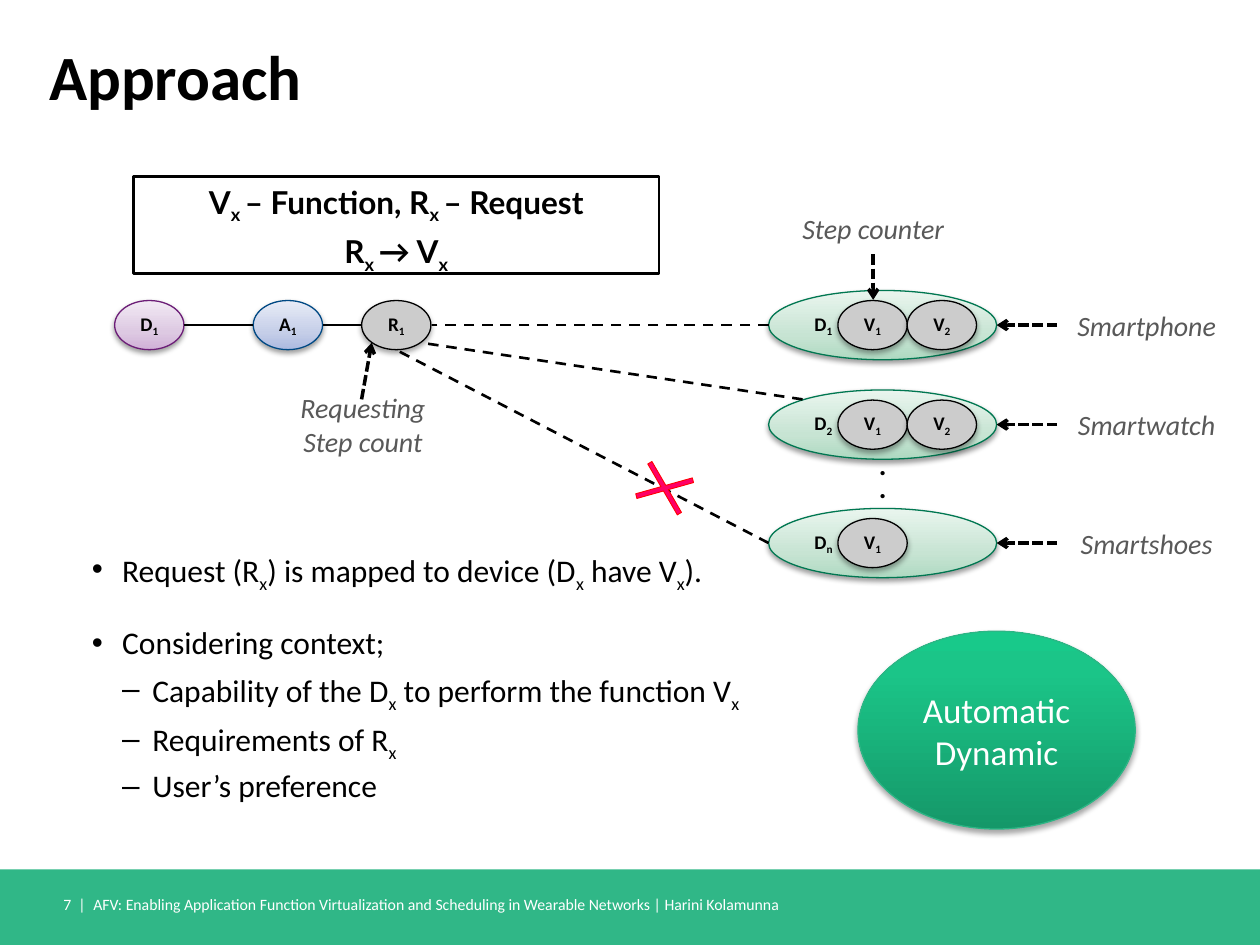
from pptx import Presentation
from pptx.dml.color import RGBColor
from pptx.enum.dml import MSO_LINE
from pptx.enum.shapes import MSO_CONNECTOR, MSO_SHAPE
from pptx.enum.text import MSO_ANCHOR as Anchor, PP_ALIGN as Align
from pptx.oxml.ns import qn
from pptx.util import Inches, Pt
from lxml.etree import SubElement

COLORS = {
    "black": "000000", "white": "FFFFFF", "gray": "595959", "node": "CCCCCC",
    "band": "30B787", "cross": "FF0066", "cross_line": "FF0000",
    "purple": "6C1D77", "blue": "004984", "green": "007751", "badge": "2CB685",
}
GRADIENTS = {
    "purple": [(0, "D0B0D7"), (35, "DDC9E2"), (100, "F2EAF4")],
    "blue": [(0, "ABB9E0"), (35, "C5CEE8"), (100, "E8ECF7")],
    "green": [(0, "AED9C1"), (35, "C7E4D3"), (100, "E9F5EE")],
    "badge": [(0, "159869"), (80, "1BC588"), (100, "18C98A")],
}
NODE_WIDTH, NODE_HEIGHT = 0.55, 0.39
DEVICE_LEFT, DEVICE_WIDTH, DEVICE_HEIGHT = 6.1, 1.81, 0.55
LABEL_WIDTH, LABEL_LEFT = 1.42, 8.39


def rgb(name):
    return RGBColor.from_string(COLORS[name])


class SlideBuilder:
    """Holds the text style and the slide being drawn."""

    def __init__(self, slide, font="Calibri"):
        self.slide = slide
        self.font = font

    def set_text(self, shape, lines, size, color="black", bold=False, italic=False,
                 align=Align.LEFT, anchor=Anchor.TOP, font=None, inset=None,
                 spacing=None, gap=0):
        """Set one paragraph per line; text between ~ marks is subscript."""
        frame = shape.text_frame
        frame.word_wrap = True
        frame.vertical_anchor = anchor
        if inset is not None:
            frame.margin_left = frame.margin_right = Inches(inset)
            frame.margin_top = frame.margin_bottom = Inches(inset)
        for index, line in enumerate(lines):
            paragraph = frame.add_paragraph() if index else frame.paragraphs[0]
            paragraph.alignment = align
            if spacing:
                paragraph.line_spacing = spacing
            if index and gap:
                paragraph.space_before = Pt(gap)
            for position, part in enumerate(line.split("~")):
                if not part:
                    continue
                run = paragraph.add_run()
                run.text = part
                run.font.name = font or self.font
                run.font.size = Pt(size)
                run.font.bold, run.font.italic = bold, italic
                run.font.color.rgb = rgb(color)
                if position % 2:
                    run._r.get_or_add_rPr().set("baseline", "-25000")
        return frame

    def text(self, left, top, width, height, lines, size, **style):
        box = self.slide.shapes.add_textbox(
            Inches(left), Inches(top), Inches(width), Inches(height))
        return self.set_text(box, lines, size, **style)

    def label(self, left, top, text):
        self.text(left, top, LABEL_WIDTH, NODE_HEIGHT, [text], 16, color="gray",
                  italic=True, align=Align.CENTER, anchor=Anchor.MIDDLE)

    def shape(self, kind, left, top, width, height, fill=None, line=None, weight=0.75):
        shape = self.slide.shapes.add_shape(
            kind, Inches(left), Inches(top), Inches(width), Inches(height))
        shape.shadow.inherit = False
        if fill in GRADIENTS:
            self.gradient(shape, GRADIENTS[fill])
        elif fill:
            shape.fill.solid()
            shape.fill.fore_color.rgb = rgb(fill)
        else:
            shape.fill.background()
        if line:
            shape.line.color.rgb = rgb(line)
            shape.line.width = Pt(weight)
        else:
            shape.line.fill.background()
        return shape

    def gradient(self, shape, stops):
        shape.fill.gradient()
        shape.fill.gradient_angle = 90
        stop_list = shape._element.spPr.find(qn("a:gradFill")).find(qn("a:gsLst"))
        for stop in list(stop_list):
            stop_list.remove(stop)
        for position, value in stops:
            stop = SubElement(stop_list, qn("a:gs"), pos=str(position * 1000))
            SubElement(stop, qn("a:srgbClr"), val=value)

    def oval(self, left, top, width, height, fill, line, lines, size, alpha=35,
             distance=1.8, **style):
        oval = self.shape(MSO_SHAPE.OVAL, left, top, width, height, fill, line)
        shadow = SubElement(
            oval._element.spPr.find(qn("a:effectLst")), qn("a:outerShdw"),
            blurRad=str(Pt(3.1)), dist=str(Pt(distance)), dir="5400000", rotWithShape="0")
        shade = SubElement(shadow, qn("a:srgbClr"), val=COLORS["black"])
        SubElement(shade, qn("a:alpha"), val=str(alpha * 1000))
        self.set_text(oval, lines, size, anchor=Anchor.MIDDLE, **style)

    def node(self, left, center, text, fill="node", line="black", **shadow):
        self.oval(left, center - NODE_HEIGHT / 2, NODE_WIDTH, NODE_HEIGHT, fill, line,
                  [text], 11, bold=True, align=Align.CENTER, **shadow)

    def line(self, start, end, dash=None, arrow=False):
        connector = self.slide.shapes.add_connector(
            MSO_CONNECTOR.STRAIGHT, *map(Inches, start + end))
        connector.line.color.rgb = rgb("black")
        connector.line.width = Pt(2 if arrow else 1.5)
        if arrow:
            dash = MSO_LINE.SQUARE_DOT
        if dash:
            connector.line.dash_style = dash
        if arrow:
            SubElement(connector.line._get_or_add_ln(), qn("a:tailEnd"), type="arrow")
        SubElement(connector._element.spPr, qn("a:effectLst"))

    def bullets(self, left, top, width, height, items, size):
        """Items are (bullet, left margin, space before, text)."""
        frame = self.text(left, top, width, height, [item[3] for item in items], size,
                          inset=0, spacing=0.9)
        for paragraph, (bullet, margin, before, _) in zip(frame.paragraphs, items):
            properties = paragraph._p.get_or_add_pPr()
            properties.set("marL", str(Inches(margin)))
            properties.set("indent", str(Inches(-0.24)))
            SubElement(properties, qn("a:buFont"), typeface="Arial")
            SubElement(properties, qn("a:buChar"), char=bullet)
            if before:
                paragraph.space_before = Pt(before)


def main():
    presentation = Presentation()
    presentation.slide_width, presentation.slide_height = Inches(10), Inches(7.5)
    slide = presentation.slides.add_slide(presentation.slide_layouts[6])
    builder = SlideBuilder(slide)

    # Footer band and title
    builder.shape(MSO_SHAPE.RECTANGLE, 0, 6.9, 10, 0.6, "band")
    builder.text(0.39, 0.3, 8.55, 0.93, ["Approach"], 36, bold=True, inset=0)
    footer = {"color": "white", "anchor": Anchor.MIDDLE, "inset": 0}
    builder.text(0.36, 7.11, 0.32, 0.14, ["7  |"], 9, align=Align.RIGHT, **footer)
    builder.text(0.74, 7.11, 6.65, 0.14, [
        "AFV: Enabling Application Function Virtualization and Scheduling in "
        "Wearable Networks | Harini Kolamunna"], 9, **footer)

    # Bullet list
    builder.bullets(0.5, 4.38, 9, 1.97, [
        ("•", 0.47, 0, "Request (R~x~) is mapped to device (D~x~ have V~x~)."),
        ("•", 0.47, 21, "Considering context;"),
        ("–", 0.71, 6, "Capability of the D~x~ to perform the function V~x~"),
        ("–", 0.71, 6, "Requirements of R~x~"),
        ("–", 0.71, 6, "User’s preference"),
    ], 18)

    # Badge
    builder.oval(6.81, 5.01, 2.2, 1.57, "badge", "badge", ["Automatic", "Dynamic"], 20,
                 color="white", align=Align.CENTER)

    # Notation box
    notation = builder.shape(MSO_SHAPE.RECTANGLE, 1.06, 1.4, 4.17, 0.77,
                             line="black", weight=1.5)
    builder.set_text(notation, ["V~x ~– Function, R~x ~– Request", "R~x ~→ V~x~"], 18,
                     bold=True, align=Align.CENTER, font="Lato", gap=3.6)

    # Request chain
    center = 2.58
    builder.node(0.91, center, "D~1~", "purple", "purple", alpha=38, distance=1.6)
    builder.node(2.01, center, "A~1~", "blue", "blue", alpha=38, distance=1.6)
    builder.node(2.87, center, "R~1~")
    for start, end in ((2.01, 1.46), (2.87, 2.56)):
        builder.line((start, center), (end, center))

    # Devices with their functions, names and pointers
    devices = [
        (2.58, "D~1~", 2, "Smartphone"),
        (3.37, "D~2~", 2, "Smartwatch"),
        (4.31, "D~n~", 1, "Smartshoes"),
    ]
    device_right = DEVICE_LEFT + DEVICE_WIDTH
    for center, device, functions, name in devices:
        builder.oval(DEVICE_LEFT, center - DEVICE_HEIGHT / 2, DEVICE_WIDTH, DEVICE_HEIGHT,
                     "green", "green", [device], 11, bold=True, alpha=38, distance=1.6)
        for index in range(functions):
            builder.node(6.65 + index * NODE_WIDTH, center, f"V~{index + 1}~")
        builder.label(LABEL_LEFT, center - NODE_HEIGHT / 2, name)
        builder.line((LABEL_LEFT, center), (device_right, center), arrow=True)
    builder.text(6.57, 3.62, 0.87, 0.64, [".", "."], 16, bold=True, font="Lato",
                 align=Align.CENTER, spacing=0.5, gap=3.2)

    # Mapping lines from devices to the request
    for start, end in (((6.1, 2.58), (3.43, 2.58)), ((6.37, 3.17), (3.34, 2.72)),
                       ((6.1, 4.31), (3.15, 2.78))):
        builder.line(start, end, dash=MSO_LINE.DASH)
    cross = builder.shape(MSO_SHAPE.MATH_MULTIPLY, 4.92, 3.6, 0.71, 0.55,
                          "cross", "cross_line", 0.5)
    cross.adjustments[0] = 0.07
    cross.rotation = 22.1

    # Annotations
    builder.label(6.22, 1.62, "Step counter")
    builder.line((6.93, 2.02), (6.93, 2.38), arrow=True)
    builder.label(2.17, 3.17, "Requesting Step count")
    builder.line((2.87, 3.17), (2.95, 2.72), arrow=True)

    presentation.save("out.pptx")


if __name__ == "__main__":
    main()
